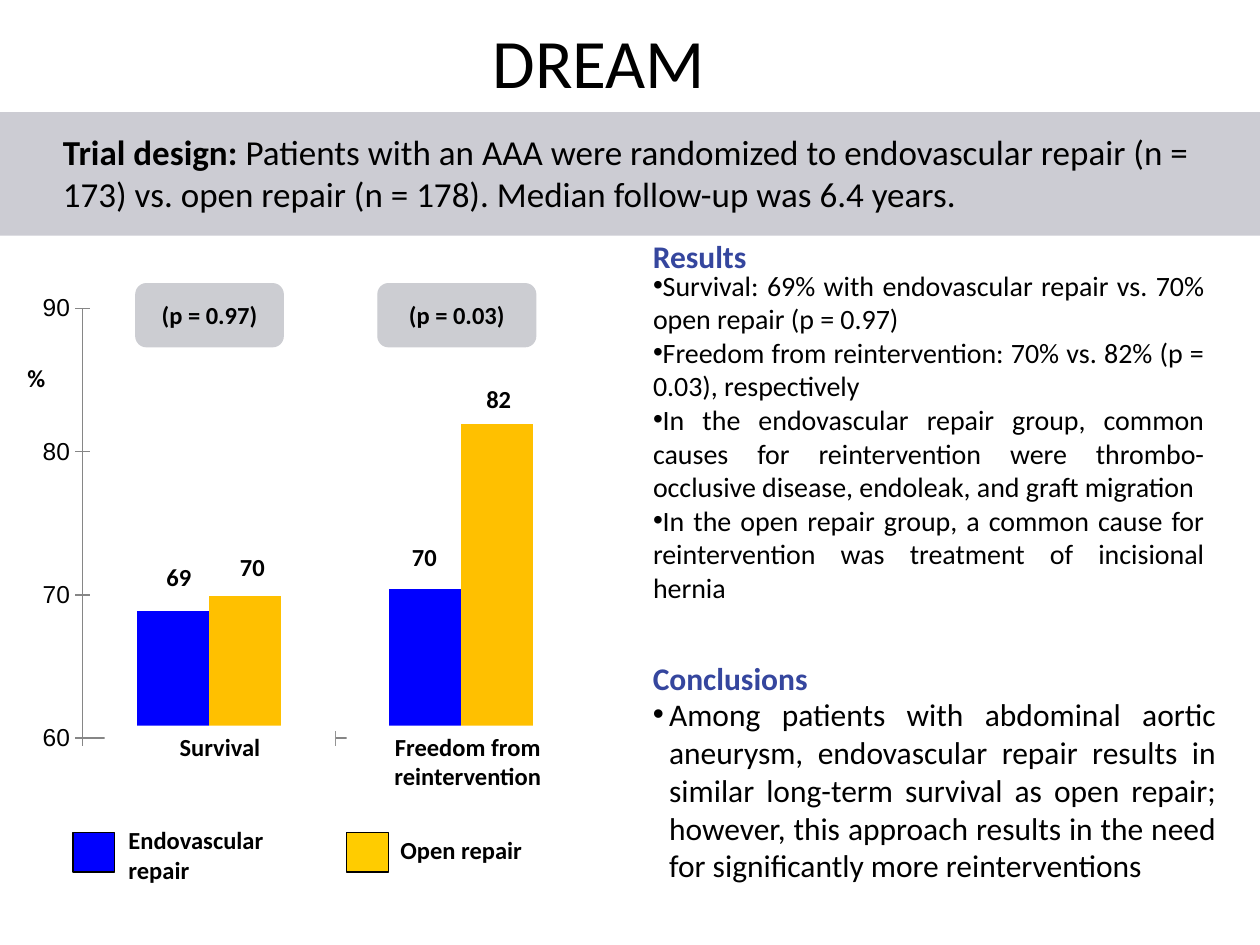
from dataclasses import dataclass

from lxml import etree
from pptx import Presentation
from pptx.chart.data import CategoryChartData
from pptx.dml.color import RGBColor
from pptx.enum.chart import XL_CHART_TYPE, XL_TICK_LABEL_POSITION, XL_TICK_MARK
from pptx.enum.shapes import MSO_SHAPE
from pptx.enum.text import MSO_ANCHOR, MSO_AUTO_SIZE, PP_ALIGN
from pptx.oxml import parse_xml
from pptx.oxml.ns import nsdecls, qn
from pptx.util import Cm, Pt

LEFT, CENTER, JUSTIFY = PP_ALIGN.LEFT, PP_ALIGN.CENTER, PP_ALIGN.JUSTIFY
TOP, MIDDLE = MSO_ANCHOR.TOP, MSO_ANCHOR.MIDDLE
RECT, ROUNDED = MSO_SHAPE.RECTANGLE, MSO_SHAPE.ROUNDED_RECTANGLE
CROSS, NO_TICK = XL_TICK_MARK.CROSS, XL_TICK_MARK.NONE

COLORS = {
    "text": "000000", "heading": "35469E", "band": "CCCCD3", "p_value": "CCCDD2",
    "endovascular": "0000FF", "open": "FFC000", "open_key": "FFCC00",
    "axis": "868686", "white": "FFFFFF",
}
COLUMN_LEFT = 12.91


@dataclass(frozen=True)
class Box:
    left: float
    top: float
    width: float
    height: float

    def lengths(self) -> tuple:
        return Cm(self.left), Cm(self.top), Cm(self.width), Cm(self.height)


@dataclass(frozen=True)
class Label:
    text: str
    box: Box
    align: int = CENTER
    size: float = 14
    color: str = "text"
    bold: bool = True


@dataclass(frozen=True)
class Panel:
    label: Label
    kind: int
    fill: str
    anchor: int = MIDDLE
    line: str = ""


LABELS = [
    Label("Results", Box(COLUMN_LEFT, 4.65, 11.2, 1.02), LEFT, 18, "heading"),
    Label("Conclusions", Box(COLUMN_LEFT, 13.16, 11, 1.02), LEFT, 18, "heading"),
    Label("Endovascular repair", Box(2.34, 16.51, 4.01, 1.45), LEFT),
    Label("Open repair", Box(7.82, 16.71, 3.81, 0.86), LEFT),
    Label("%", Box(0.2, 7.19, 1.07, 0.86)),
    Label("69", Box(2.97, 11.2, 1.27, 0.86)),
    Label("70", Box(4.24, 11, 1.7, 0.86)),
    Label("70", Box(7.82, 10.8, 1.47, 0.86)),
    Label("82", Box(9.32, 7.62, 1.47, 0.86)),
]
PANELS = [
    Panel(Label("(p = 0.97)", Box(2.74, 5.72, 2.97, 1.27)), ROUNDED, "p_value", line="p_value"),
    Panel(Label("(p = 0.03)", Box(7.62, 5.72, 3.18, 1.27)), ROUNDED, "p_value", line="p_value"),
    Panel(Label("", Box(1.47, 16.79, 0.84, 0.79)), RECT, "endovascular", line="text"),
    Panel(Label("", Box(6.99, 16.79, 0.84, 0.79)), RECT, "open_key", line="text"),
    Panel(Label("Survival", Box(2.11, 14.63, 4.65, 0.86)), RECT, "white", TOP),
    Panel(Label("Freedom from reintervention", Box(6.99, 14.63, 4.88, 1.45)), RECT, "white", TOP),
]
RESULTS = [
    "Survival: 69% with endovascular repair vs. 70% open repair (p = 0.97)",
    "Freedom from reintervention: 70% vs. 82% (p = 0.03), respectively",
    "In the endovascular repair group, common causes for reintervention were "
    "thrombo-occlusive disease, endoleak, and graft migration",
    "In the open repair group, a common cause for reintervention was treatment "
    "of incisional hernia",
]
CONCLUSION = Label(
    "Among patients with abdominal aortic aneurysm, endovascular repair results in "
    "similar long-term survival as open repair; however, this approach results in "
    "the need for significantly more reinterventions",
    Box(COLUMN_LEFT, 13.89, 11.86, 4.11), JUSTIFY, 18, bold=False)


def rgb(name: str) -> RGBColor:
    return RGBColor.from_string(COLORS[name])


def set_font(font, size: float, color: str = "text", bold: bool = False, face: str = "Calibri") -> None:
    font.name, font.size, font.bold = face, Pt(size), bold
    font.color.rgb = rgb(color)


def set_paragraph(paragraph, label: Label) -> None:
    paragraph.text = label.text
    paragraph.alignment = label.align
    paragraph.space_before = Pt(0)
    set_font(paragraph.font, label.size, label.color, label.bold)


def set_bullet(paragraph, hanging: float) -> None:
    properties = paragraph._p.get_or_add_pPr()
    properties.set("marL", str(Cm(hanging)))
    properties.set("indent", str(-Cm(hanging)))
    etree.SubElement(properties, qn("a:buFont")).set("typeface", "Arial")
    etree.SubElement(properties, qn("a:buChar")).set("char", "•")
    defaults = properties.find(qn("a:defRPr"))
    if defaults is not None:
        properties.append(defaults)


def place(shape, box: Box) -> None:
    shape.left, shape.top, shape.width, shape.height = box.lengths()


def add_label(slide, label: Label):
    frame = slide.shapes.add_textbox(*label.box.lengths()).text_frame
    frame.word_wrap = True
    set_paragraph(frame.paragraphs[0], label)
    return frame


def add_panel(slide, panel: Panel):
    shape = slide.shapes.add_shape(panel.kind, *panel.label.box.lengths())
    shape.shadow.inherit = False
    shape.fill.solid()
    shape.fill.fore_color.rgb = rgb(panel.fill)
    if panel.line:
        shape.line.color.rgb = rgb(panel.line)
        shape.line.width = Pt(0.75)
    else:
        shape.line.fill.background()
    shape.text_frame.vertical_anchor = panel.anchor
    if panel.label.text:
        set_paragraph(shape.text_frame.paragraphs[0], panel.label)
    return shape


def add_outcome_chart(slide) -> None:
    data = CategoryChartData()
    data.categories = ["survival", "reintervention"]
    data.add_series("Endovascular repair", (68.9, 70.4))
    data.add_series("Open repair", (69.9, 81.9))
    box = Box(0.64, 5.72, 11.43, 9.96)
    chart = slide.shapes.add_chart(XL_CHART_TYPE.COLUMN_CLUSTERED, *box.lengths(), data).chart
    chart.has_legend = chart.has_title = False
    set_font(chart.font, 10)
    plot = chart.plots[0]
    plot.vary_by_categories, plot.gap_width, plot.overlap = False, 150, 0
    for series, color in zip(plot.series, ("endovascular", "open")):
        series.format.fill.solid()
        series.format.fill.fore_color.rgb = rgb(color)
    values = chart.value_axis
    values.minimum_scale, values.maximum_scale, values.major_unit = 60, 90, 10
    values.has_major_gridlines = False
    set_font(values.tick_labels.font, 14, face="Arial")
    chart.category_axis.tick_label_position = XL_TICK_LABEL_POSITION.NONE
    for axis in (values, chart.category_axis):
        axis.major_tick_mark, axis.minor_tick_mark = CROSS, NO_TICK
        axis.format.line.color.rgb = rgb("axis")
        axis.format.line.width = Pt(0.75)
    area = chart._chartSpace.chart.plotArea
    for old_layout in area.findall(qn("c:layout")):
        area.remove(old_layout)
    sizes = "".join(f'<c:{key} val="{value}"/>' for key, value in
                    (("x", 0.09), ("y", 0.05), ("w", 0.89), ("h", 0.87)))
    area.insert(0, parse_xml(
        f'<c:layout {nsdecls("c")}><c:manualLayout><c:layoutTarget val="inner"/>'
        f'<c:xMode val="edge"/><c:yMode val="edge"/>{sizes}</c:manualLayout></c:layout>'))


def fill_placeholders(slide) -> None:
    title, body = slide.shapes.title, slide.placeholders[1]
    place(title, Box(0.64, 0.43, 22.86, 1.57))
    place(body, Box(COLUMN_LEFT, 5.28, 11.63, 6.55))
    for placeholder in (title, body):
        placeholder.text_frame.auto_size = MSO_AUTO_SIZE.NONE
    title.text_frame.vertical_anchor = MIDDLE
    set_paragraph(title.text_frame.paragraphs[0], Label("DREAM", None, CENTER, 39.6, bold=False))
    frame = body.text_frame
    frame.text = "\n".join(RESULTS)
    for paragraph, result in zip(frame.paragraphs, RESULTS):
        set_paragraph(paragraph, Label(result, None, JUSTIFY, 16, bold=False))
        set_bullet(paragraph, 0)


def add_trial_design(slide) -> None:
    label = Label("Trial design:", Box(0, 2.26, 25.4, 2.49), LEFT, 20, bold=False)
    frame = add_panel(slide, Panel(label, RECT, "band", TOP)).text_frame
    frame.margin_left = frame.margin_right = Cm(1.27)
    frame.margin_top = frame.margin_bottom = Cm(0.38)
    paragraph = frame.paragraphs[0]
    paragraph.runs[0].font.bold = True
    paragraph.add_run().text = (
        " Patients with an AAA were randomized to endovascular repair (n = 173) "
        "vs. open repair (n = 178). Median follow-up was 6.4 years.")


def main() -> None:
    deck = Presentation()
    deck.slide_width, deck.slide_height = Cm(25.4), Cm(19.05)
    slide = deck.slides.add_slide(deck.slide_layouts[1])
    add_outcome_chart(slide)
    fill_placeholders(slide)
    add_trial_design(slide)
    for panel in PANELS:
        add_panel(slide, panel)
    for label in LABELS:
        add_label(slide, label)
    set_bullet(add_label(slide, CONCLUSION).paragraphs[0], 0.33)
    deck.save("out.pptx")


if __name__ == "__main__":
    main()
